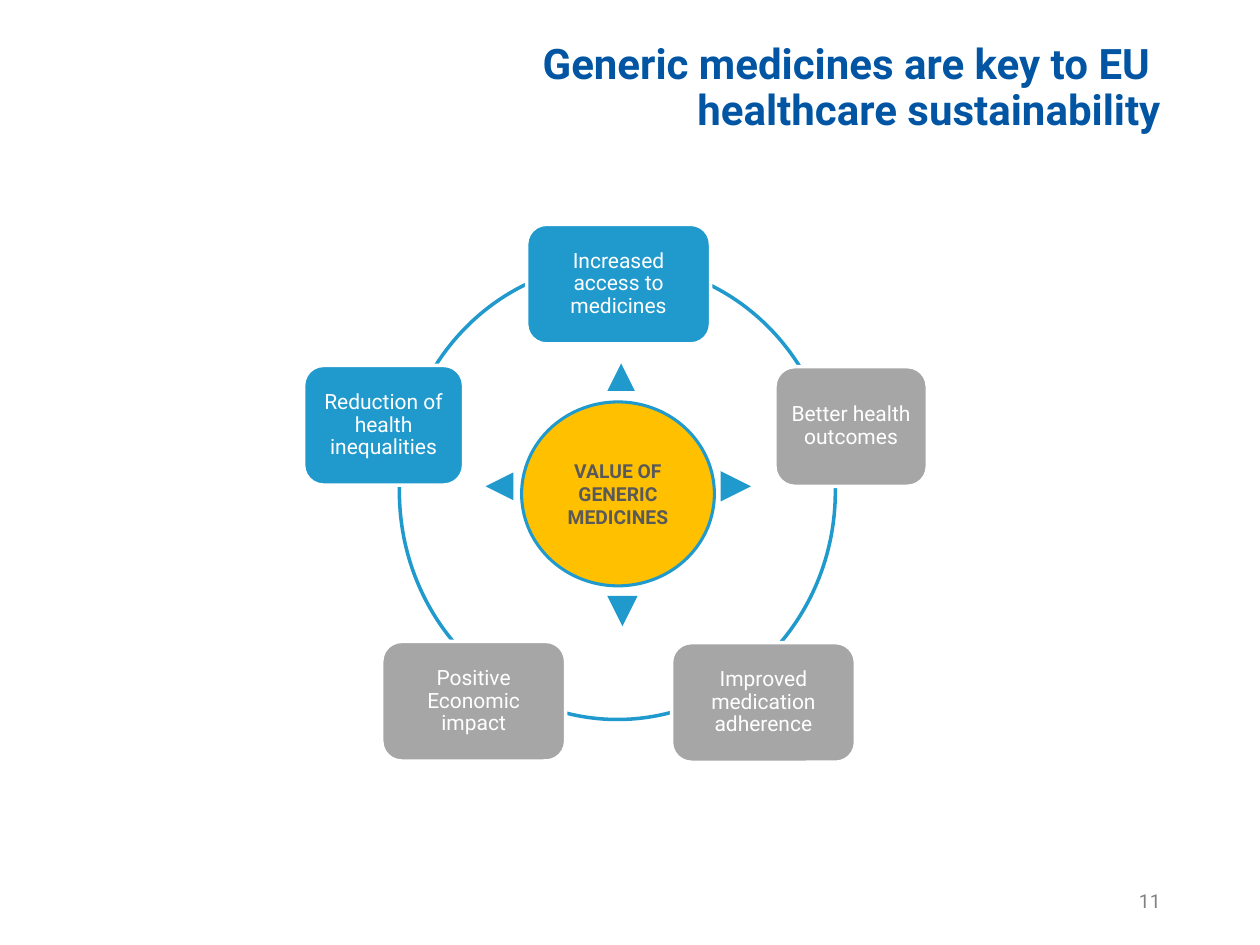
from pptx import Presentation
from pptx.dml.color import RGBColor
from pptx.enum import shapes, text
from pptx.util import Inches, Pt

BLUE, GREY, WHITE = "209ACD", "A6A6A6", "FFFFFF"
KIND = shapes.MSO_SHAPE
ALIGN = text.PP_ALIGN


def paint(shape, fill, line=None, width=0.75):
    shape.shadow.inherit = False
    if fill:
        shape.fill.solid()
        shape.fill.fore_color.rgb = RGBColor.from_string(fill)
    else:
        shape.fill.background()
    if line:
        shape.line.color.rgb = RGBColor.from_string(line)
        shape.line.width = Pt(width)
    else:
        shape.line.fill.background()


def write(shape, words, size, color, align, bold=False, gap=None):
    frame = shape.text_frame
    frame.word_wrap = True
    frame.vertical_anchor = text.MSO_ANCHOR.MIDDLE
    frame.text = words
    para = frame.paragraphs[0]
    para.alignment = align
    para.line_spacing = gap
    para.font.name = "Roboto"
    para.font.size = Pt(size)
    para.font.bold = bold
    para.font.color.rgb = RGBColor.from_string(color)


deck = Presentation()
deck.slide_width, deck.slide_height = Inches(10), Inches(7.5)
slide = deck.slides.add_slide(deck.slide_layouts[5])
parts = slide.shapes

# Title
title = parts.title
title.left, title.top = Inches(0.69), Inches(-0.02)
title.width, title.height = Inches(8.62), Inches(1.45)
write(title, "Generic medicines are key to EU \vhealthcare sustainability",
      24, "0155A3", ALIGN.RIGHT, True, 0.9)

# Page number
page = parts.add_textbox(Inches(7.06), Inches(6.95), Inches(2.25), Inches(0.4))
write(page, "11", 11, "828282", ALIGN.RIGHT)

# Ring behind the boxes
ring = parts.add_shape(KIND.OVAL, Inches(3.17), Inches(2.09),
                       Inches(3.46), Inches(3.62))
paint(ring, None, BLUE, 2)

# Benefit boxes, clockwise from the top
boxes = [
    ("Increased access to medicines", 4.18, 1.78, 1.46, BLUE),
    ("Better health outcomes", 6.15, 2.91, 1.21, GREY),
    ("Improved medication adherence", 5.33, 5.1, 1.46, GREY),
    ("Positive Economic impact", 3.03, 5.09, 1.46, GREY),
    ("Reduction of health inequalities", 2.41, 2.9, 1.27, BLUE),
]
for label, left, top, width, fill in boxes:
    box = parts.add_shape(KIND.ROUNDED_RECTANGLE, Inches(left), Inches(top),
                          Inches(width), Inches(0.95))
    paint(box, fill, WHITE, 2)
    write(box, label, 12, WHITE, ALIGN.CENTER, gap=0.9)
    frame = box.text_frame
    frame.margin_left = frame.margin_right = Inches(0.05)

# Core
core = parts.add_shape(KIND.OVAL, Inches(4.14), Inches(3.19),
                       Inches(1.53), Inches(1.46))
paint(core, "FFC000", BLUE, 1.75)
write(core, "VALUE OF GENERIC MEDICINES", 11, "595959", ALIGN.CENTER, True)

# Pointers out of the core: up, down, right, left
tips = [(4.81, 2.87, 0, WHITE), (4.82, 4.73, 180, None),
        (5.72, 3.74, 90, None), (3.84, 3.74, 270, WHITE)]
for left, top, turn, edge in tips:
    tip = parts.add_shape(KIND.ISOSCELES_TRIANGLE, Inches(left), Inches(top),
                          Inches(0.24), Inches(0.24))
    tip.rotation = turn
    paint(tip, BLUE, edge)

deck.save("out.pptx")
